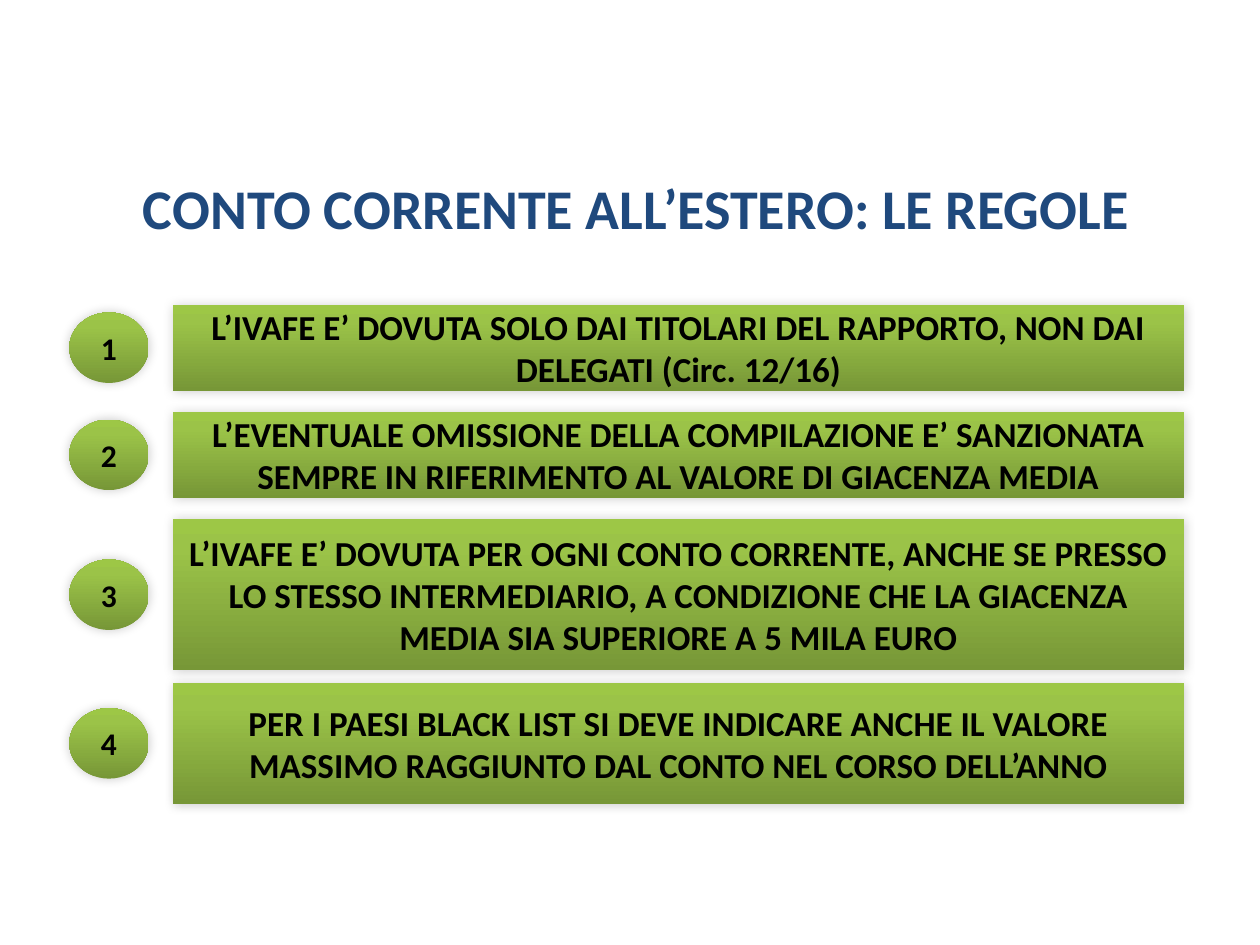
from copy import deepcopy

from lxml import etree
from pptx import Presentation
from pptx import util as u
from pptx.dml.color import RGBColor
from pptx.enum import shapes, text
from pptx.oxml import ns

COLORS = {"title": "1F497D", "ink": "000000", "shadow": "000000",
          "dark": "779737", "mid": "9BC348", "light": "9DC746"}
GRADIENT = [(0, "dark"), (0.8, "mid"), (1, "light")]
COLUMNS, ROWS = 100, 75
RULES = [
    (24.2, 6.8, "L’IVAFE E’ DOVUTA SOLO DAI TITOLARI DEL RAPPORTO, NON DAI DELEGATI (Circ. 12/16)"),
    (32.7, 6.8, "L’EVENTUALE OMISSIONE DELLA COMPILAZIONE E’ SANZIONATA SEMPRE IN RIFERIMENTO "
                "AL VALORE DI GIACENZA MEDIA"),
    (41.2, 12, "L’IVAFE E’ DOVUTA PER OGNI CONTO CORRENTE, ANCHE SE PRESSO LO STESSO INTERMEDIARIO, "
               "A CONDIZIONE CHE LA GIACENZA MEDIA SIA SUPERIORE A 5 MILA EURO"),
    (54.2, 9.6, "PER I PAESI BLACK LIST SI DEVE INDICARE ANCHE IL VALORE MASSIMO RAGGIUNTO "
                "DAL CONTO NEL CORSO DELL’ANNO"),
]


class RuleSlide:
    def __init__(self, deck):
        self.deck = deck
        self.slide = deck.slides.add_slide(deck.slide_layouts[6])
        self.font = {"name": "Calibri", "bold": True}

    def place(self, left, top, width, height):
        across = self.deck.slide_width / COLUMNS
        down = self.deck.slide_height / ROWS
        return [round(n * unit) for n, unit in
                zip((left, top, width, height), (across, down, across, down))]

    def label(self, holder, wording, size, color):
        frame = holder.text_frame
        frame.word_wrap = True
        frame.vertical_anchor = text.MSO_ANCHOR.MIDDLE
        paragraph = frame.paragraphs[0]
        paragraph.alignment = text.PP_ALIGN.CENTER
        run = paragraph.add_run()
        run.text = wording
        for key, value in {**self.font, "size": u.Pt(size)}.items():
            setattr(run.font, key, value)
        run.font.color.rgb = RGBColor.from_string(COLORS[color])

    def shade(self, shape):
        shape.fill.gradient()
        shape.fill.gradient_angle = 90
        stops = shape._element.spPr.find(ns.qn("a:gradFill")).find(ns.qn("a:gsLst"))
        stops.append(deepcopy(stops[-1]))
        for stop, (position, color) in zip(shape.fill.gradient_stops, GRADIENT):
            stop.position = position
            stop.color.rgb = RGBColor.from_string(COLORS[color])
        shape.line.fill.background()

    def cast_shadow(self, shape):
        shape.shadow.inherit = False
        effects = shape._element.spPr.find(ns.qn("a:effectLst"))
        shadow = etree.SubElement(effects, ns.qn("a:outerShdw"), blurRad=str(u.Pt(6)),
                                  dist="0", dir="13500000", algn="br", rotWithShape="0")
        tone = etree.SubElement(shadow, ns.qn("a:srgbClr"), val=COLORS["shadow"])
        etree.SubElement(tone, ns.qn("a:alpha"), val="20000")

    def block(self, preset, area, wording, size):
        shape = self.slide.shapes.add_shape(preset, *self.place(*area))
        self.shade(shape)
        self.cast_shadow(shape)
        self.label(shape, wording, size, "ink")

    def title(self, area, wording):
        self.label(self.slide.shapes.add_textbox(*self.place(*area)), wording, 32, "title")

    def rule(self, number, top, height, wording):
        badge_height = 5.6
        badge_top = top + (height - badge_height) / 2
        self.block(shapes.MSO_SHAPE.OVAL, (5.5, badge_top, 6.3, badge_height), str(number), 18)
        self.block(shapes.MSO_SHAPE.RECTANGLE, (13.7, top, 80.3, height), wording, 20)


def main():
    deck = Presentation()
    deck.slide_width, deck.slide_height = u.Inches(10), u.Inches(7.5)
    page = RuleSlide(deck)
    for number, (top, height, wording) in enumerate(RULES, 1):
        page.rule(number, top, height, wording)
    page.title((0, 13.4, 100, 6), " CONTO CORRENTE ALL’ESTERO: LE REGOLE")
    deck.save("out.pptx")


if __name__ == "__main__":
    main()
